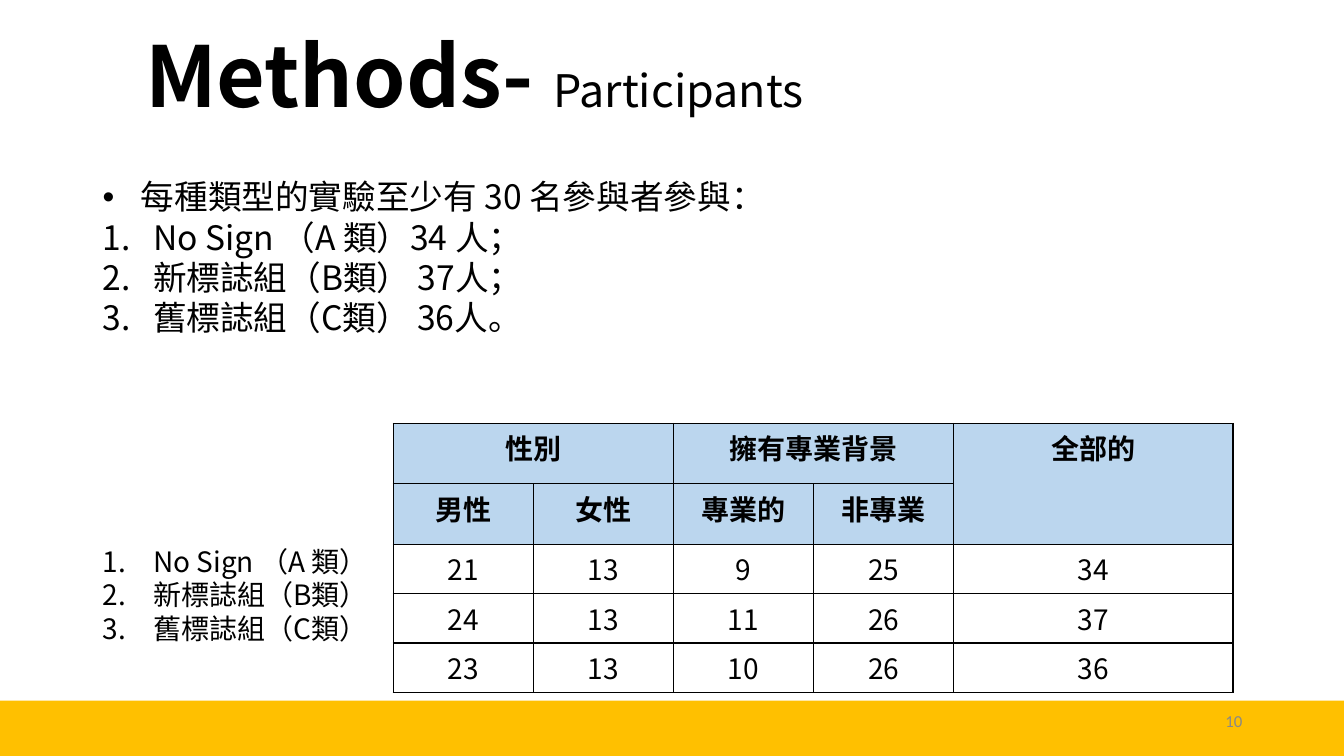
from lxml.etree import SubElement
from pptx import Presentation
from pptx.dml.color import RGBColor
from pptx.enum.shapes import MSO_SHAPE
from pptx.enum.text import MSO_ANCHOR, PP_ALIGN
from pptx.oxml.ns import qn
from pptx.util import Pt

PX = 9144
BLACK = RGBColor(0x00, 0x00, 0x00)
GREY = RGBColor(0x88, 0x88, 0x88)
AMBER = RGBColor(0xFF, 0xC0, 0x00)
PALE_BLUE = RGBColor(0xBB, 0xD6, 0xEE)
CJK = "Noto Sans CJK TC"

INTRO = "每種類型的實驗至少有 30 名參與者參與："
GROUPS = ["No Sign （A 類）", "新標誌組（B類）", "舊標誌組（C類）"]
COUNTS = ["34 人；", " 37人；", " 36人。"]
ROWS = [
    ["性別", "", "擁有專業背景", "", "全部的"],
    ["男性", "女性", "專業的", "非專業", ""],
    ["21", "13", "9", "25", "34"],
    ["24", "13", "11", "26", "37"],
    ["23", "13", "10", "26", "36"],
]
COL_WIDTHS = [139, 139, 139, 139, 277]
ROW_HEIGHTS = [60, 60, 49, 49, 49]
MERGES = [(0, 0, 0, 1), (0, 2, 0, 3), (0, 4, 1, 4)]


def emu(*lengths):
    """Turn px lengths into EMU."""
    return [n * PX for n in lengths]


def add_run(p, text, size, color=BLACK, bold=False, font=CJK):
    """Append a formatted run to a paragraph."""
    r = p.add_run()
    r.text = text
    formats = {"size": Pt(size), "bold": bold, "name": font}
    for name, value in formats.items():
        setattr(r.font, name, value)
    r.font.color.rgb = color
    SubElement(r.font._element, qn("a:ea"), typeface=font)


def add_text(s, box, anchor=MSO_ANCHOR.TOP):
    """Add an empty wrapping text box and return its frame."""
    tf = s.shapes.add_textbox(*emu(*box)).text_frame
    formats = {"word_wrap": True, "vertical_anchor": anchor}
    for name, value in formats.items():
        setattr(tf, name, value)
    return tf


def set_bullet(p, indent, tag, **attrs):
    """Give a paragraph a hanging indent and a bullet or number."""
    pPr = p._p.get_or_add_pPr()
    pPr.set("marL", str(indent * PX))
    pPr.set("indent", str(-indent * PX))
    SubElement(pPr, qn("a:buFont"), typeface="Arial" if tag == "a:buChar" else "+mj-lt")
    SubElement(pPr, qn(tag), **attrs)


def add_title(s, box):
    """Place the two-size heading."""
    p = add_text(s, box, MSO_ANCHOR.BOTTOM).paragraphs[0]
    p.alignment = PP_ALIGN.CENTER
    p.line_spacing = 0.9
    add_run(p, "Methods- ", 60, bold=True)
    add_run(p, "Participants", 32)


def add_list(s, box, items, size, intro=None):
    """Place a numbered list, led by an optional bulleted line."""
    tf = add_text(s, box)
    lines = ([intro] if intro else []) + items
    for i, line in enumerate(lines):
        p = tf.add_paragraph() if i else tf.paragraphs[0]
        p.line_spacing = 1.0
        if line == intro:
            set_bullet(p, 38, "a:buChar", char="•")
        else:
            set_bullet(p, 50, "a:buAutoNum", type="arabicPeriod")
        add_run(p, line, size)


def add_borders(cell):
    """Draw a thin black line on each side of a cell."""
    tcPr = cell._tc.get_or_add_tcPr()
    for i, side in enumerate(["L", "R", "T", "B"]):
        ln = tcPr.makeelement(qn(f"a:ln{side}"), {"w": str(Pt(1))})
        fill = SubElement(ln, qn("a:solidFill"))
        SubElement(fill, qn("a:srgbClr"), val=str(BLACK))
        tcPr.insert(i, ln)


def add_counts_table(s, left, top):
    """Place the table of participants by sex and background."""
    box = emu(left, top, sum(COL_WIDTHS), sum(ROW_HEIGHTS))
    table = s.shapes.add_table(len(ROWS), len(COL_WIDTHS), *box).table
    for col, width in zip(table.columns, COL_WIDTHS):
        col.width = width * PX
    for row, height in zip(table.rows, ROW_HEIGHTS):
        row.height = height * PX
    for r0, c0, r1, c1 in MERGES:
        table.cell(r0, c0).merge(table.cell(r1, c1))
    for i, row in enumerate(ROWS):
        header = i < 2
        for j, text in enumerate(row):
            cell = table.cell(i, j)
            for side in ["left", "right", "top", "bottom"]:
                setattr(cell, f"margin_{side}", 4 * PX)
            if header:
                cell.fill.solid()
                cell.fill.fore_color.rgb = PALE_BLUE
            else:
                cell.fill.background()
            add_borders(cell)
            if text:
                p = cell.text_frame.paragraphs[0]
                p.alignment = PP_ALIGN.CENTER
                add_run(p, text, 20, bold=header)


def add_footer(s, left, top, width, height):
    """Place the amber band and the page number on it."""
    band = s.shapes.add_shape(MSO_SHAPE.RECTANGLE, *emu(left, top, width, height))
    band.shadow.inherit = False
    band.fill.solid()
    band.fill.fore_color.rgb = AMBER
    band.line.fill.background()
    tf = add_text(s, (left + 944, top, 300, 40), MSO_ANCHOR.MIDDLE)
    p = tf.paragraphs[0]
    p.alignment = PP_ALIGN.RIGHT
    add_run(p, "10", 12, color=GREY, font="Calibri")


def main():
    """Build and save the slide."""
    prs = Presentation()
    prs.slide_width, prs.slide_height = emu(1333, 750)
    s = prs.slides.add_slide(prs.slide_layouts[6])
    add_footer(s, -2, 695, 1336, 55)
    add_title(s, (65, 0, 811, 130))
    sizes = [group + count for group, count in zip(GROUPS, COUNTS)]
    add_list(s, (92, 170, 1183, 200), sizes, 24, intro=INTRO)
    add_counts_table(s, 390, 420)
    add_list(s, (92, 535, 1183, 200), GROUPS, 20)
    prs.save("out.pptx")


if __name__ == "__main__":
    main()
